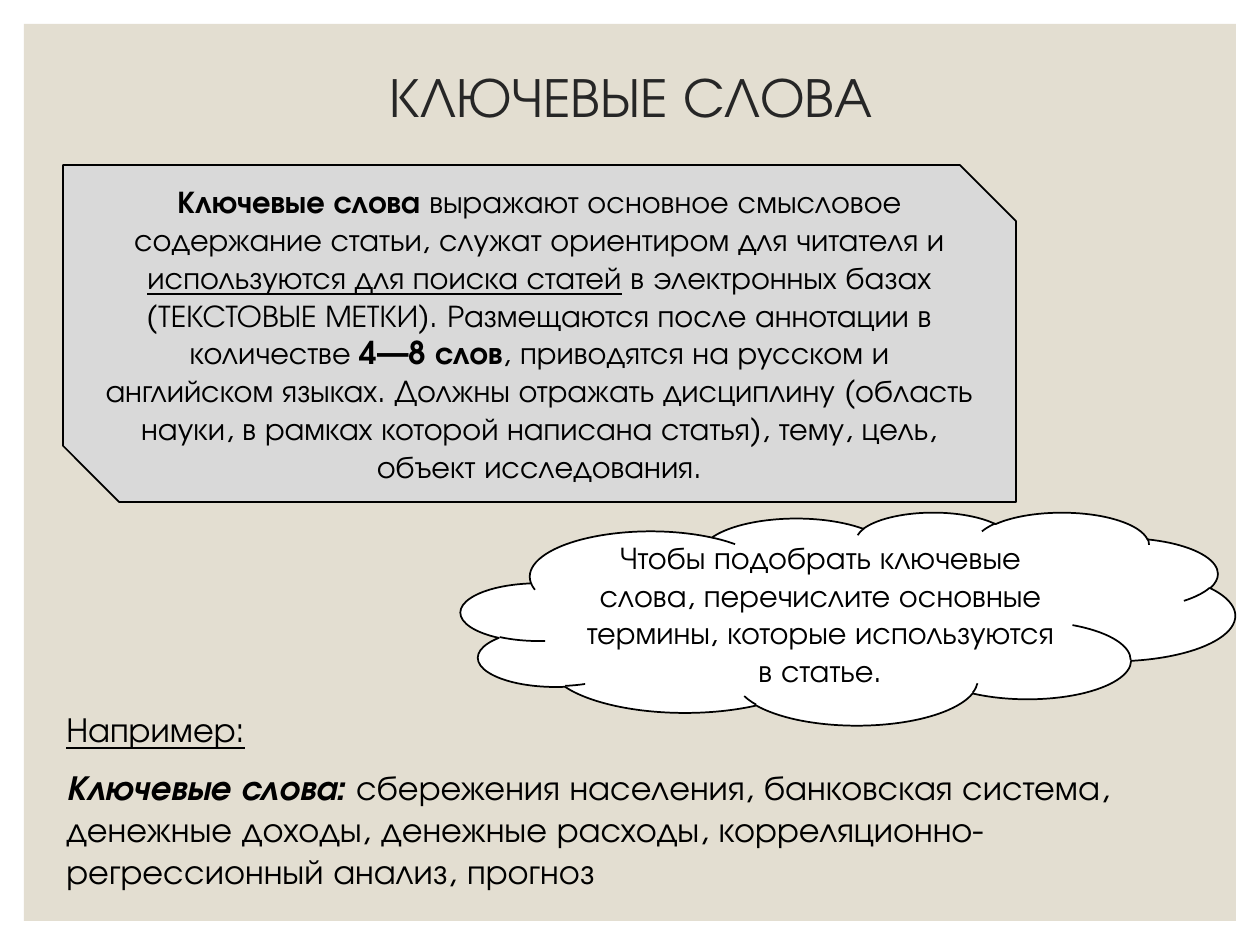
from dataclasses import dataclass

from pptx import Presentation
from pptx.dml.color import RGBColor as RGB
from pptx.enum.shapes import MSO_SHAPE as SHAPE
from pptx.enum.text import MSO_ANCHOR as ANCHOR, PP_ALIGN as ALIGN
from pptx.util import Pt

PX = 914400 / 126


@dataclass(frozen=True)
class Theme:
    font: str = "TeX Gyre Adventor"
    panel: str = "E3DED1"
    card: str = "D9D9D9"
    white: str = "FFFFFF"
    ink: str = "000000"
    heading: str = "262626"
    title_size: int = 32
    example_size: int = 20
    body_size: int = 18


THEME = Theme()


def emu(box):
    return [round(v * PX) for v in box]


def add_shape(s, kind, box, fill, line=None):
    sp = s.shapes.add_shape(kind, *emu(box))
    sp.shadow.inherit = False
    sp.fill.solid()
    sp.fill.fore_color.rgb = RGB.from_string(fill)
    if line:
        sp.line.color.rgb = RGB.from_string(line)
        sp.line.width = Pt(1)
    else:
        sp.line.fill.background()
    return sp


def add_text(sp, paragraphs, size, color=THEME.ink, align=ALIGN.CENTER,
             anchor=ANCHOR.MIDDLE, before=0, spacing=1.0):
    tf = sp.text_frame
    tf.word_wrap = True
    tf.vertical_anchor = anchor
    for i, runs in enumerate(paragraphs):
        p = tf.add_paragraph() if i else tf.paragraphs[0]
        p.alignment = align
        p.space_before = Pt(before)
        p.line_spacing = spacing
        for text, style in runs:
            r = p.add_run()
            r.text = text
            r.font.name = THEME.font
            r.font.size = Pt(size)
            r.font.color.rgb = RGB.from_string(color)
            r.font.bold = "b" in style
            r.font.italic = "i" in style
            r.font.underline = "u" in style


def title(s, box):
    add_text(s.shapes.add_textbox(*emu(box)), [[("КЛЮЧЕВЫЕ СЛОВА", "")]],
             THEME.title_size, color=THEME.heading, spacing=0.9)


def example(s, box):
    add_text(s.shapes.add_textbox(*emu(box)), [
        [("Например:", "u")],
        [("Ключевые слова: ", "bi"),
         ("сбережения населения, банковская система, денежные доходы, "
          "денежные расходы, корреляционно-регрессионный анализ, прогноз", "")],
    ], THEME.example_size, align=ALIGN.LEFT, anchor=ANCHOR.TOP, before=9)


def definition(s, box):
    sp = add_shape(s, SHAPE.SNIP_2_DIAG_RECTANGLE, box, THEME.card, THEME.ink)
    add_text(sp, [[
        ("Ключевые слова ", "b"),
        ("выражают основное смысловое содержание статьи, "
         "служат ориентиром для читателя и ", ""),
        ("используются для поиска статей", "u"),
        (" в электронных базах (ТЕКСТОВЫЕ МЕТКИ). "
         "Размещаются после аннотации в количестве ", ""),
        ("4—8 слов", "b"),
        (", приводятся на русском и английском языках. Должны отражать "
         "дисциплину (область науки, в рамках которой написана статья), "
         "тему, цель, объект исследования.", ""),
    ]], THEME.body_size)


def hint(s, box):
    sp = add_shape(s, SHAPE.CLOUD, box, THEME.white, THEME.ink)
    add_text(sp, [[("Чтобы подобрать ключевые слова, перечислите основные "
                    "термины, которые используются в статье.", "")]],
             THEME.body_size)


def main():
    prs = Presentation()
    prs.slide_width, prs.slide_height = emu((1260, 945))
    s = prs.slides.add_slide(prs.slide_layouts[6])
    add_shape(s, SHAPE.RECTANGLE, (24, 24, 1212, 897), THEME.panel)
    title(s, (64, 20, 1134, 158))
    example(s, (54, 701, 1134, 306))
    definition(s, (63, 165, 953, 337))
    hint(s, (461, 512, 774, 213))
    prs.save("out.pptx")


if __name__ == "__main__":
    main()
